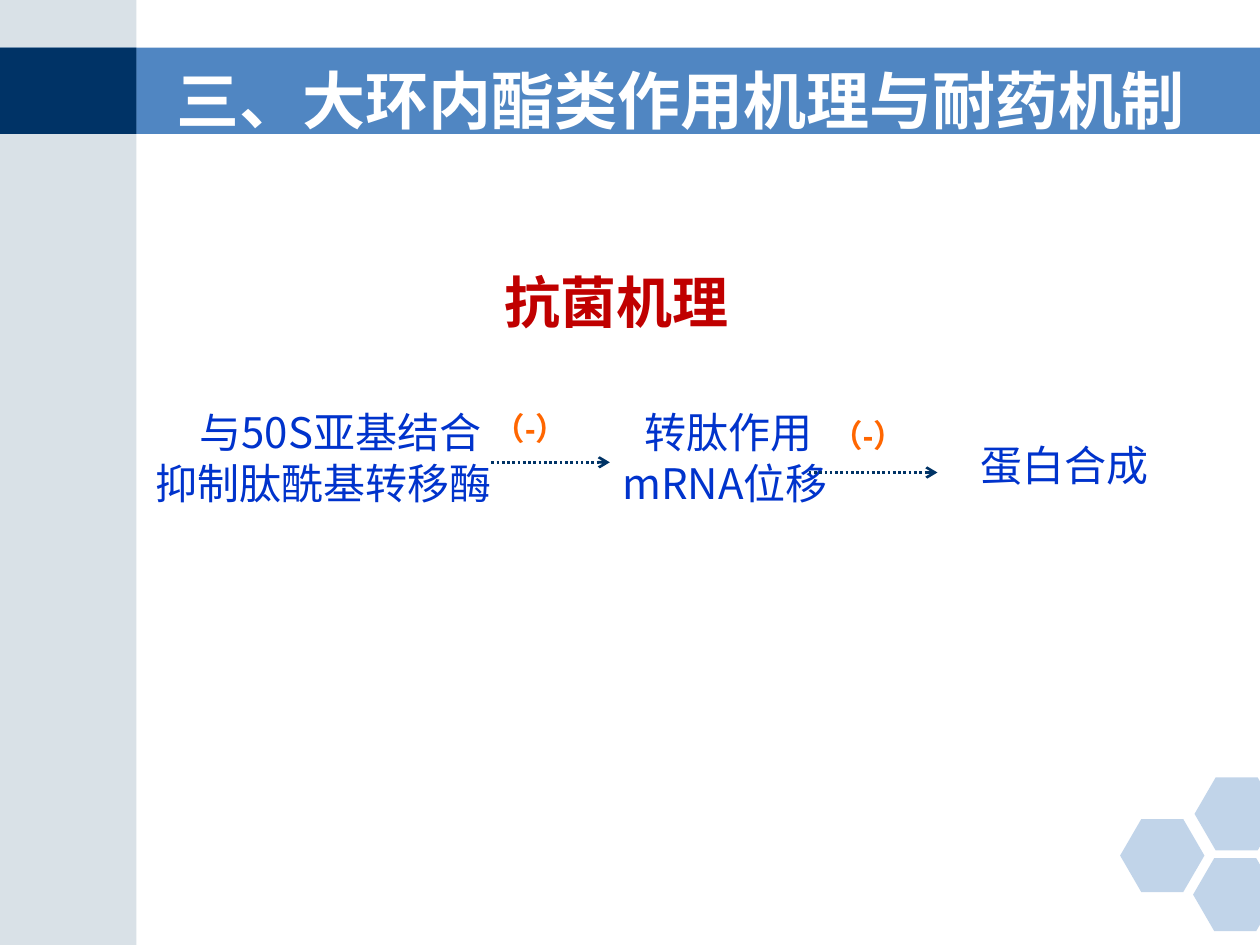
from pptx import Presentation
from pptx.dml.color import RGBColor
from pptx.enum.dml import MSO_LINE
from pptx.enum.shapes import MSO_CONNECTOR, MSO_SHAPE
from pptx.enum.text import MSO_ANCHOR, PP_ALIGN
from pptx.oxml.ns import qn
from pptx.util import Pt
from lxml import etree

RECT, HEX = MSO_SHAPE.RECTANGLE, MSO_SHAPE.HEXAGON
STRAIGHT, DOTS = MSO_CONNECTOR.STRAIGHT, MSO_LINE.ROUND_DOT
LEFT, TOP = PP_ALIGN.LEFT, MSO_ANCHOR.TOP

SKY = RGBColor(0x50, 0x86, 0xC2)
GREY = RGBColor(0xA0, 0xB5, 0xC4)
NAVY = RGBColor(0x00, 0x33, 0x66)
BLUE = RGBColor(0x00, 0x33, 0xCC)
ORANGE = RGBColor(0xFF, 0x66, 0x00)
RED = RGBColor(0xC0, 0x00, 0x00)
WHITE = RGBColor(0xFF, 0xFF, 0xFF)
SANS, ARIAL = "Noto Sans CJK SC", "Arial"

WIDTH, HEIGHT = 720, 540
SIDE = 78
BAND_TOP, BAND_H = 27.2, 49.3
HEX_W, HEX_H = 48.2, 41.8

TITLE = "三、大环内酯类作用机理与耐药机制"
TOPIC = "抗菌机理"
# lines, first-line indent, box, font
STEPS = [
    (["与50S亚基结合", "抑制肽酰基转移酶"], 25, (82, 229, 246, 66), SANS),
    (["转肽作用", "mRNA位移"], 13, (348.5, 229, 202, 66), SANS),
    (["蛋白合成"], 0, (553, 247.7, 150, 36), ARIAL),
]
BLOCK = "（-）"
BLOCKS = [(275, 230.4, 97, 45), (468, 234, 122, 45)]
ARROWS = [(280.8, 348.5, 264.2), (462.2, 535.7, 270)]  # from x, to x, y
HEXES = [(640.1, 468), (682.6, 444.2), (681.8, 490.3)]


def add_block(kind, box, color, alpha=100):
    shape = slide.shapes.add_shape(kind, *map(Pt, box))
    shape.shadow.inherit = False
    shape.fill.solid()
    shape.fill.fore_color.rgb = color
    shape.line.fill.background()
    if alpha < 100:
        tint = shape.fill._xPr.find(".//" + qn("a:srgbClr"))
        etree.SubElement(tint, qn("a:alpha"), val=str(alpha * 1000))
    return shape


def write(shape, lines, size, color, font=SANS, bold=False, indent=0):
    frame = shape.text_frame
    frame.word_wrap = True
    frame.vertical_anchor = TOP
    for i, line in enumerate(lines):
        para = frame.add_paragraph() if i else frame.paragraphs[0]
        para.alignment = LEFT
        if indent and i == 0:
            para._p.get_or_add_pPr().set("indent", str(Pt(indent)))
        run = para.add_run()
        run.text = line
        run.font.name = font
        run.font.size = Pt(size)
        run.font.bold = bold
        run.font.color.rgb = color
        etree.SubElement(run._r.rPr, qn("a:ea"), typeface=SANS)
    return frame


def add_text(box, *args, **style):
    return write(slide.shapes.add_textbox(*map(Pt, box)), *args, **style)


def add_arrow(x1, x2, y):
    line = slide.shapes.add_connector(STRAIGHT, Pt(x1), Pt(y), Pt(x2), Pt(y))
    line.line.color.rgb = NAVY
    line.line.width = Pt(1.5)
    line.line.dash_style = DOTS
    etree.SubElement(line.line._get_or_add_ln(), qn("a:tailEnd"), type="arrow")
    etree.SubElement(line._element.spPr, qn("a:effectLst"))


deck = Presentation()
deck.slide_width, deck.slide_height = Pt(WIDTH), Pt(HEIGHT)
slide = deck.slides.add_slide(deck.slide_layouts[5])

add_block(RECT, (0, BAND_TOP, WIDTH, BAND_H), SKY)
add_block(RECT, (0, 0, SIDE, HEIGHT), GREY, 40)
add_block(RECT, (0, BAND_TOP, SIDE, BAND_H), NAVY)
for x, y in HEXES:
    cell = add_block(HEX, (x, y, HEX_W, HEX_H), SKY, 35)
    cell.adjustments[0] = 0.29

for lines, indent, box, font in STEPS:
    add_text(box, lines, 24, BLUE, font, indent=indent)
for box in BLOCKS:
    add_text(box, [BLOCK], 18, ORANGE, ARIAL, bold=True)
for arrow in ARROWS:
    add_arrow(*arrow)

title = slide.shapes.title
title.left, title.top, title.width, title.height = map(Pt, (93.6, 31.7, 596, 51))
write(title, [TITLE], 36, WHITE, bold=True).word_wrap = False
slide.shapes._spTree.append(title._element)  # in front of the band

topic = add_text((281, 134, 176, 55), [TOPIC], 32, RED, bold=True)
topic.paragraphs[0].line_spacing = 1.4

deck.save("out.pptx")
